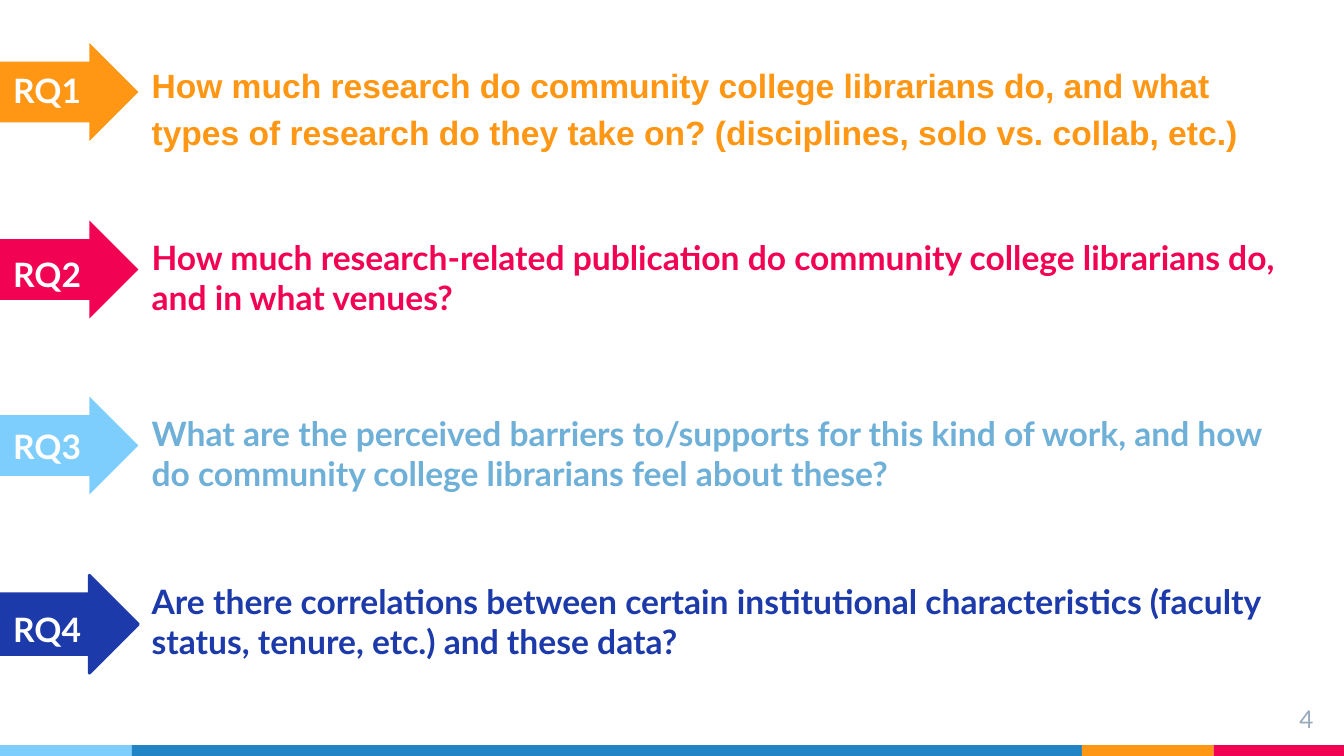
from dataclasses import dataclass
from typing import Optional

from pptx import Presentation
from pptx.dml.color import RGBColor
from pptx.enum.shapes import MSO_SHAPE as Shape
from pptx.enum.text import MSO_ANCHOR as Anchor, PP_ALIGN as Align
from pptx.util import Inches, Pt


@dataclass(frozen=True)
class Theme:
    orange: str = "FF9715"
    pink: str = "F20253"
    sky: str = "7ECEFD"
    soft_blue: str = "6EB0D7"
    blue: str = "2185C5"
    navy: str = "1C3AA9"
    gray: str = "97ABBC"
    white: str = "FFFFFF"
    font: str = "Lato"
    alt_font: str = "Arial"
    question_size: float = 18
    number_size: float = 13


THEME = Theme()


@dataclass(frozen=True)
class Question:
    text: str
    arrow_color: str
    text_color: str
    arrow_top: float
    text_top: float
    label_top: float
    font: str = THEME.font
    line_spacing: Optional[float] = None
    outline: Optional[float] = None


@dataclass(frozen=True)
class Band:
    width: float
    color: str


QUESTIONS = [
    Question("How much research do community college librarians do, and what types of "
             "research do they take on? (disciplines, solo vs. collab, etc.)",
             THEME.orange, THEME.orange, 0.32, 0.25, 0.42, THEME.alt_font,
             line_spacing=1.15),
    Question("How much research-related publication do community college librarians do, "
             "and in what venues?",
             THEME.pink, THEME.pink, 1.64, 1.48, 1.79),
    Question("What are the perceived barriers to/supports for this kind of work, and how "
             "do community college librarians feel about these?",
             THEME.sky, THEME.soft_blue, 2.95, 2.79, 3.07),
    Question("Are there correlations between certain institutional characteristics "
             "(faculty status, tenure, etc.) and these data?",
             THEME.navy, THEME.navy, 4.28, 4.04, 4.43, outline=1.5),
]
BANDS = [Band(0.98, THEME.sky), Band(7.07, THEME.blue),
         Band(0.98, THEME.orange), Band(0.97, THEME.pink)]

SLIDE_W = 10
SLIDE_H = SLIDE_W * 9 / 16
BAND_H = 0.08
ARROW_W, ARROW_H = 1.03, 0.73


def add_solid(s, kind, x: float, y: float, w: float, h: float, color: str,
              outline: Optional[float] = None):
    """Add a filled preset shape, with a line of its own colour if outlined."""
    sp = s.shapes.add_shape(kind, Inches(x), Inches(y), Inches(w), Inches(h))
    sp.shadow.inherit = False
    sp.fill.solid()
    sp.fill.fore_color.rgb = RGBColor.from_string(color)
    if outline is None:
        sp.line.fill.background()
    else:
        sp.line.color.rgb = RGBColor.from_string(color)
        sp.line.width = Pt(outline)
    return sp


def add_text(s, text: str, x: float, y: float, w: float, h: float, color: str,
             size: float = THEME.question_size, font: str = THEME.font,
             bold: bool = True, anchor=Anchor.TOP, align=Align.LEFT,
             line_spacing: Optional[float] = None) -> None:
    tf = s.shapes.add_textbox(Inches(x), Inches(y), Inches(w), Inches(h)).text_frame
    tf.word_wrap = True
    tf.vertical_anchor = anchor
    tf.margin_left = tf.margin_right = tf.margin_top = tf.margin_bottom = Inches(0.1)
    p = tf.paragraphs[0]
    p.alignment = align
    if line_spacing:
        p.line_spacing = line_spacing
    r = p.add_run()
    r.text = text
    r.font.name = font
    r.font.size = Pt(size)
    r.font.bold = bold
    r.font.color.rgb = RGBColor.from_string(color)


def add_footer(s) -> None:
    x = 0.0
    for band in BANDS:
        add_solid(s, Shape.RECTANGLE, x, SLIDE_H - BAND_H, band.width, BAND_H, band.color)
        x += band.width
    add_text(s, "4", 9.27, 5.14, 0.6, 0.34, THEME.gray, THEME.number_size,
             bold=False, align=Align.RIGHT)


def add_question(s, number: int, q: Question) -> None:
    """Add the arrow, its RQ label and the question beside it."""
    arrow = add_solid(s, Shape.RIGHT_ARROW, 0, q.arrow_top, ARROW_W, ARROW_H,
                      q.arrow_color, q.outline)
    arrow.adjustments[0] = 0.62
    arrow.adjustments[1] = 0.5
    add_text(s, f"RQ{number}", 0, q.label_top, 0.72, 0.26, THEME.white)
    add_text(s, q.text, ARROW_W, q.text_top, 8.7, 0.98, q.text_color, font=q.font,
             anchor=Anchor.BOTTOM, line_spacing=q.line_spacing)


def main() -> None:
    prs = Presentation()
    prs.slide_width, prs.slide_height = Inches(SLIDE_W), Inches(SLIDE_H)
    s = prs.slides.add_slide(prs.slide_layouts[6])
    add_footer(s)
    for number, question in enumerate(QUESTIONS, start=1):
        add_question(s, number, question)
    prs.save("out.pptx")


if __name__ == "__main__":
    main()
